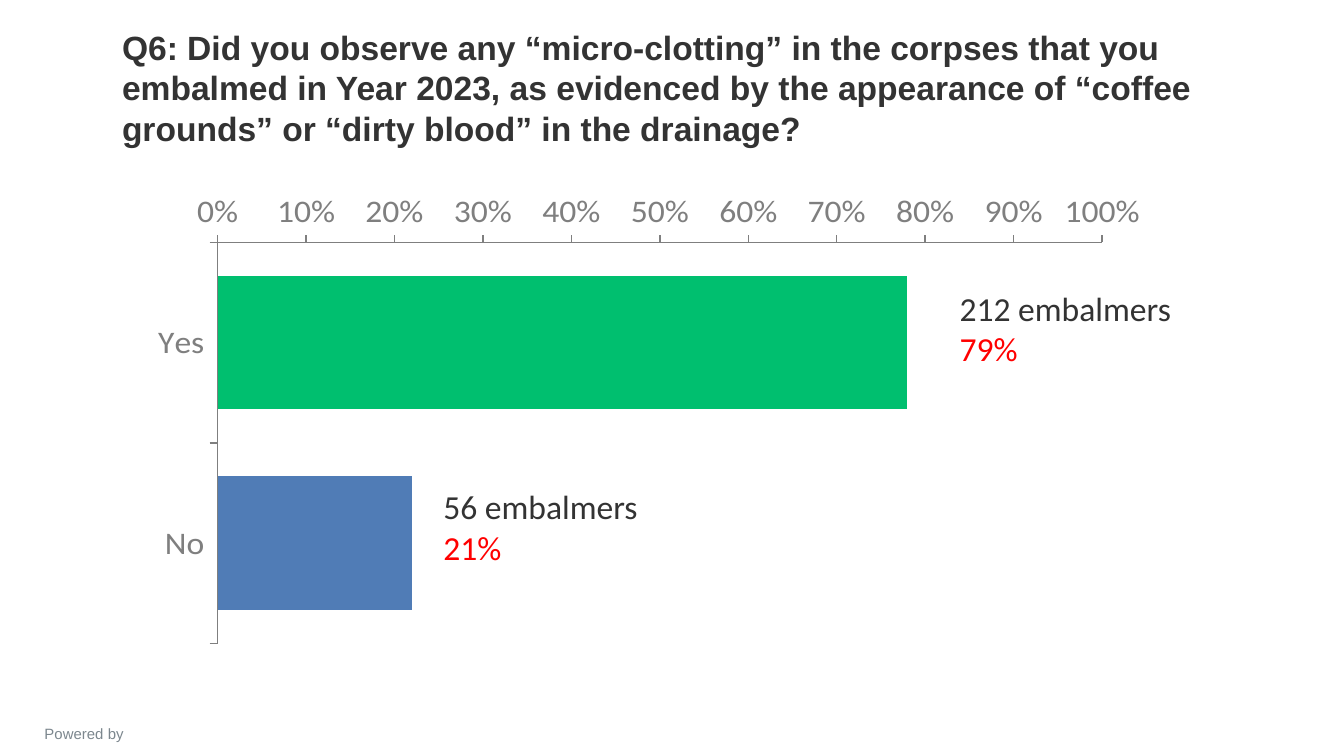
from lxml import etree
from pptx import Presentation
from pptx.chart import data
from pptx.dml import color
from pptx.enum import chart as ch, text
from pptx.oxml import ns
from pptx.util import Pt

INK, GREY, RED = "333333", "7F7F7F", "FF0000"


def rgb(code):
    return color.RGBColor.from_string(code)


class Deck:
    body = "Calibri"
    heading = "Arial"
    size = 18

    def __init__(self, width, height):
        self.prs = Presentation()
        self.prs.slide_width, self.prs.slide_height = Pt(width), Pt(height)
        self.slide = self.prs.slides.add_slide(self.prs.slide_layouts[6])

    def style(self, font, code, name=None, size=None, bold=False):
        font.name, font.size = name or self.body, Pt(size or self.size)
        font.bold, font.color.rgb = bold, rgb(code)

    def text(self, box, lines, align=text.PP_ALIGN.LEFT,
             anchor=text.MSO_ANCHOR.TOP, wrap=True, **look):
        """Add a text box with one paragraph per (wording, colour) line."""
        frame = self.slide.shapes.add_textbox(*map(Pt, box)).text_frame
        frame.word_wrap, frame.vertical_anchor = wrap, anchor
        if not wrap:
            frame.auto_size = text.MSO_AUTO_SIZE.SHAPE_TO_FIT_TEXT
        for i, (wording, code) in enumerate(lines):
            para = frame.add_paragraph() if i else frame.paragraphs[0]
            para.alignment = align
            run = para.add_run()
            run.text = wording
            self.style(run.font, code, **look)

    def axis(self, axis):
        axis.has_major_gridlines = False
        axis.major_tick_mark = ch.XL_TICK_MARK.OUTSIDE
        axis.minor_tick_mark = ch.XL_TICK_MARK.NONE
        axis.format.line.color.rgb = rgb(GREY)
        axis.format.line.width = Pt(0.75)
        self.style(axis.tick_labels.font, GREY)

    def plot_area(self, chart, **fractions):
        """Fix the inner plot area as fractions of the chart frame."""
        area = chart.element.find(".//" + ns.qn("c:plotArea"))
        for old in area.findall(ns.qn("c:layout")):
            area.remove(old)
        layout = etree.Element(ns.qn("c:layout"))
        area.insert(0, layout)
        manual = etree.SubElement(layout, ns.qn("c:manualLayout"))
        settings = dict(layoutTarget="inner", xMode="edge", yMode="edge", **fractions)
        for tag, value in settings.items():
            etree.SubElement(manual, ns.qn("c:" + tag)).set("val", str(value))

    def bar_chart(self, box, answers):
        """Add a share chart from {category: (share, colour)}, first on top."""
        shares = data.CategoryChartData(number_format="0%")
        shares.categories = list(answers)
        shares.add_series("Series 1", [share for share, _ in answers.values()])
        chart = self.slide.shapes.add_chart(
            ch.XL_CHART_TYPE.BAR_CLUSTERED, *map(Pt, box), shares).chart
        chart.has_legend = chart.has_title = False
        self.style(chart.font, INK)

        bars = chart.plots[0]
        bars.gap_width, bars.overlap, bars.vary_by_categories = 50, 100, False
        series = bars.series[0]
        series.invert_if_negative = False
        for i, (_, code) in enumerate(answers.values()):
            fill = series.points[i].format.fill
            fill.solid()
            fill.fore_color.rgb = rgb(code)

        names, scale = chart.category_axis, chart.value_axis
        self.axis(names)
        self.axis(scale)
        names.reverse_order = True
        names.crosses = ch.XL_AXIS_CROSSES.MAXIMUM
        names.tick_label_position = ch.XL_TICK_LABEL_POSITION.LOW
        scale.minimum_scale, scale.maximum_scale, scale.major_unit = 0, 1, 0.1
        scale.tick_labels.number_format = "0%"
        scale.tick_labels.number_format_is_linked = False
        self.plot_area(chart, x=0.09, y=0.03, w=0.86, h=0.82)


deck = Deck(720, 405)
deck.text((3.6, 384.5, 83, 13), [("Powered by", "7C878E")],
          align=text.PP_ALIGN.CENTER, name=deck.heading, size=8)
deck.text((58.3, 39.6, 648, 43.2), [(
    "Q6: Did you observe any “micro-clotting” in the corpses that you "
    "embalmed in Year 2023, as evidenced by the appearance of “coffee "
    "grounds” or “dirty blood” in the drainage?", INK)],
    anchor=text.MSO_ANCHOR.BOTTOM, name=deck.heading, bold=True)
deck.bar_chart((67, 103, 551, 281),
               {"Yes": (0.78, "00BF6F"), "No": (0.22, "507CB6")})
for box, count, share in (
    ((507, 150.5, 140, 51), "212 embalmers", "79%"),
    ((230.4, 257, 130, 51), "56 embalmers", "21%"),
):
    deck.text(box, [(count, INK), (share, RED)], wrap=False)
deck.prs.save("out.pptx")
